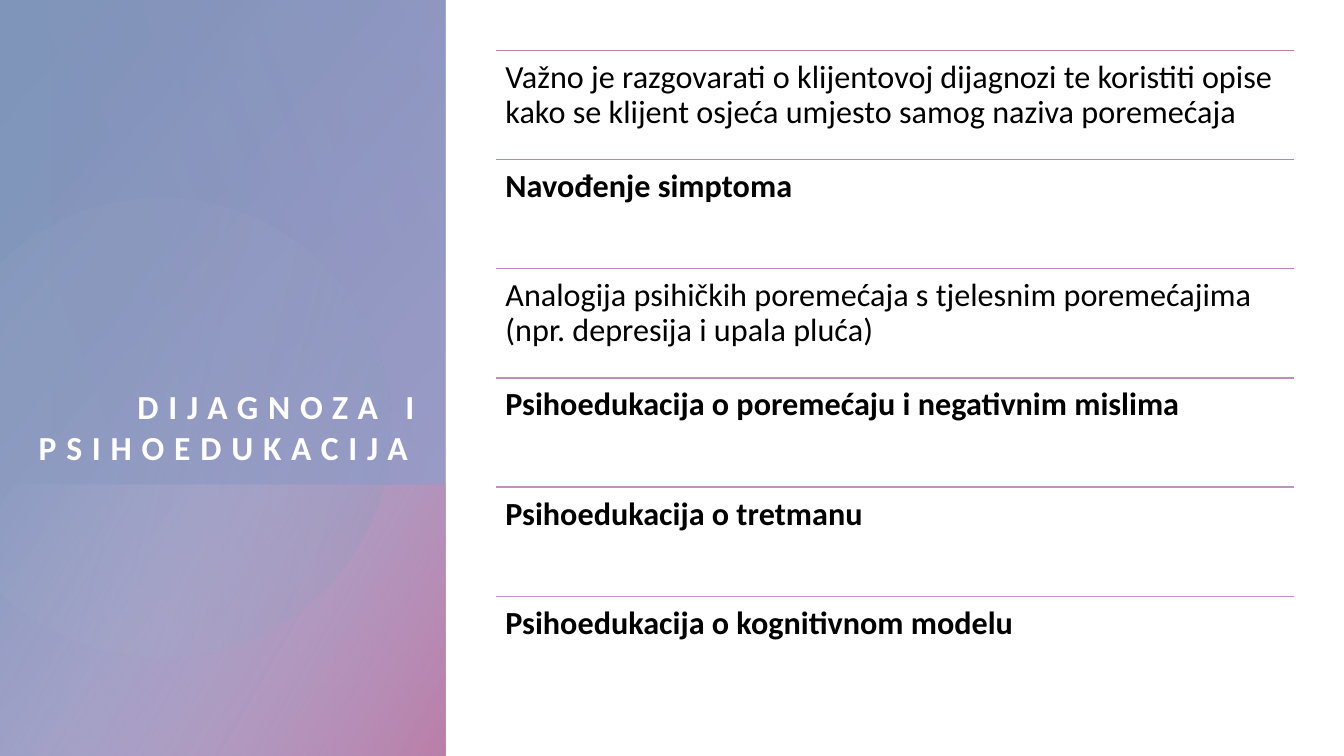
import math
from dataclasses import dataclass

import pptx
import pptx.dml.color
import pptx.enum.shapes
import pptx.enum.text
import pptx.oxml
import pptx.oxml.ns
import pptx.util
from lxml import etree

# Slide grid: 160 columns by 90 rows of square cells
CELL = pptx.util.Inches(1) / 12
COLUMNS, ROWS = 160, 90


@dataclass(frozen=True)
class Theme:
    font: str = "Calibri"
    title_size: int = 24
    title_tail_size: int = 20
    title_tracking: int = 7
    row_size: int = 23
    white: str = "FFFFFF"
    black: str = "000000"
    blue: str = "7F96BA"
    pale_blue: str = "B2C0D6"
    lavender: str = "9896C6"
    pale_lavender: str = "C1C0DD"
    violet: str = "997FBA"
    pink: str = "BA7FA9"
    rules: tuple[str, ...] = ("BA7FA9", "BC84B1", "BF88B8", "C18DBF", "C191C4", "C096C6")


THEME = Theme()


@dataclass(frozen=True)
class Area:
    column: float
    row: float
    columns: float
    rows: float

    def lengths(self) -> list[int]:
        return [cells(n) for n in (self.column, self.row, self.columns, self.rows)]


@dataclass(frozen=True)
class Stop:
    position: int
    colour: str
    opacity: int = 100


@dataclass(frozen=True)
class Wash:
    """A gradient rectangle standing on its side; area is what shows."""
    area: Area
    turn: int
    angle: int
    stops: tuple[Stop, ...]


@dataclass(frozen=True)
class Topic:
    text: str
    bold: bool = True


PANEL_COLUMNS = 53
BASE_WASHES = (
    Wash(Area(0, 0, PANEL_COLUMNS, ROWS), 270, 50,
         (Stop(8, THEME.blue), Stop(100, THEME.lavender, 89))),
    Wash(Area(0, 57.7, PANEL_COLUMNS, 32.3), 270, 60,
         (Stop(0, THEME.pale_lavender, 0), Stop(99, THEME.pink))),
)
TOP_WASH = Wash(Area(5.9, 0, 47.1, 57.7), 90, 110,
                (Stop(0, THEME.lavender, 29), Stop(100, THEME.violet, 0)))
DISC_STOPS = (Stop(36, THEME.pale_blue, 6), Stop(100, THEME.blue, 26))
DISC_X, DISC_Y, DISC_RADIUS = 19.1, 50.9, 27.4

TITLE_AREA = Area(3.6, 11.4, 46.9, 44.2)
LIST_AREA = Area(59, 6, 95, 78)
TOPICS = (
    Topic("Važno je razgovarati o klijentovoj dijagnozi te koristiti opise kako se klijent "
          "osjeća umjesto samog naziva poremećaja ", bold=False),
    Topic("Navođenje simptoma "),
    Topic("Analogija psihičkih poremećaja s tjelesnim poremećajima "
          "(npr. depresija i upala pluća)", bold=False),
    Topic("Psihoedukacija o poremećaju i negativnim mislima"),
    Topic("Psihoedukacija o tretmanu "),
    Topic("Psihoedukacija o kognitivnom modelu "),
)


def cells(count: float) -> int:
    return round(count * CELL)


def rgb(colour: str) -> pptx.dml.color.RGBColor:
    return pptx.dml.color.RGBColor.from_string(colour)


def set_gradient(shape, stops: tuple[Stop, ...], angle: int) -> None:
    shape.shadow.inherit = False
    shape.line.fill.background()
    shape.fill.gradient()
    qn = pptx.oxml.ns.qn
    gradient = shape._element.spPr.find(qn("a:gradFill"))
    gradient.clear()
    gradient.set("rotWithShape", "1")
    stop_list = etree.SubElement(gradient, qn("a:gsLst"))
    for stop in stops:
        mark = etree.SubElement(stop_list, qn("a:gs"), pos=str(stop.position * 1000))
        colour = etree.SubElement(mark, qn("a:srgbClr"), val=stop.colour)
        if stop.opacity < 100:
            etree.SubElement(colour, qn("a:alpha"), val=str(stop.opacity * 1000))
    etree.SubElement(gradient, qn("a:lin"), ang=str(angle * 60000), scaled="0")


def draw_wash(page, wash: Wash) -> None:
    area = wash.area
    shift = (area.columns - area.rows) / 2
    frame = Area(area.column + shift, area.row - shift, area.rows, area.columns)
    shape = page.shapes.add_shape(pptx.enum.shapes.MSO_SHAPE.RECTANGLE, *frame.lengths())
    shape.rotation = wash.turn
    shape._element.spPr.xfrm.set("flipH", "1")
    set_gradient(shape, wash.stops, wash.angle)


def draw_disc(page) -> None:
    """A circle cut off by the left edge of the slide."""
    half_arc = math.acos(-DISC_X / DISC_RADIUS)
    steps = 90
    turns = [half_arc * (2 * step / steps - 1) for step in range(steps + 1)]
    points = [(cells(DISC_X + DISC_RADIUS * math.cos(turn)),
               cells(DISC_Y + DISC_RADIUS * math.sin(turn))) for turn in turns]
    outline = page.shapes.build_freeform(*points[0])
    outline.add_line_segments(points[1:], close=True)
    set_gradient(outline.convert_to_shape(), DISC_STOPS, 14)


def style_font(font, size: int, colour: str, bold: bool) -> None:
    font.name = THEME.font
    font.size = pptx.util.Pt(size)
    font.bold = bold
    font.color.rgb = rgb(colour)


def write_title(page) -> None:
    title = page.shapes.title
    page.shapes._spTree.append(title._element)  # in front of the panel
    title.left, title.top, title.width, title.height = TITLE_AREA.lengths()
    box = title.text_frame
    box.auto_size = pptx.enum.text.MSO_AUTO_SIZE.NONE
    box.word_wrap = True
    box.vertical_anchor = pptx.enum.text.MSO_ANCHOR.BOTTOM
    box.margin_left = box.margin_right = box.margin_top = box.margin_bottom = 0
    para = box.paragraphs[0]
    para.alignment = pptx.enum.text.PP_ALIGN.RIGHT
    style_font(para.font, THEME.title_size, THEME.white, True)
    for text, size in (("DIJAGNOZA I PSIHOEDUKACIJA", THEME.title_size),
                       (" ", THEME.title_tail_size)):
        span = para.add_run()
        span.text = text
        span.font.size = pptx.util.Pt(size)
        span._r.get_or_add_rPr().set("spc", str(THEME.title_tracking * 100))


def draw_topic(page, topic: Topic, area: Area, rule_colour: str) -> None:
    left, top, width, height = area.lengths()
    rule = page.shapes.add_connector(
        pptx.enum.shapes.MSO_CONNECTOR.STRAIGHT, left, top, left + width, top)
    rule.line.color.rgb = rgb(rule_colour)
    rule.line.width = pptx.util.Pt(1)
    etree.SubElement(rule._element.spPr, pptx.oxml.ns.qn("a:effectLst"))

    box = page.shapes.add_textbox(left, top, width, height).text_frame
    box.word_wrap = True
    box.margin_left = box.margin_right = box.margin_top = box.margin_bottom = cells(1.2)
    para = box.paragraphs[0]
    para.text = topic.text
    para.line_spacing = 0.9
    style_font(para.font, THEME.row_size, THEME.black, topic.bold)


def main() -> None:
    deck = pptx.Presentation()
    deck.slide_width, deck.slide_height = cells(COLUMNS), cells(ROWS)
    page = deck.slides.add_slide(deck.slide_layouts.get_by_name("Title Only"))

    # Coloured panel with the title
    for wash in BASE_WASHES:
        draw_wash(page, wash)
    draw_disc(page)
    draw_wash(page, TOP_WASH)
    write_title(page)

    # Ruled list of topics
    pitch = LIST_AREA.rows / len(TOPICS)
    for index, (topic, colour) in enumerate(zip(TOPICS, THEME.rules)):
        area = Area(LIST_AREA.column, LIST_AREA.row + index * pitch, LIST_AREA.columns, pitch)
        draw_topic(page, topic, area, colour)

    deck.save("out.pptx")


if __name__ == "__main__":
    main()
